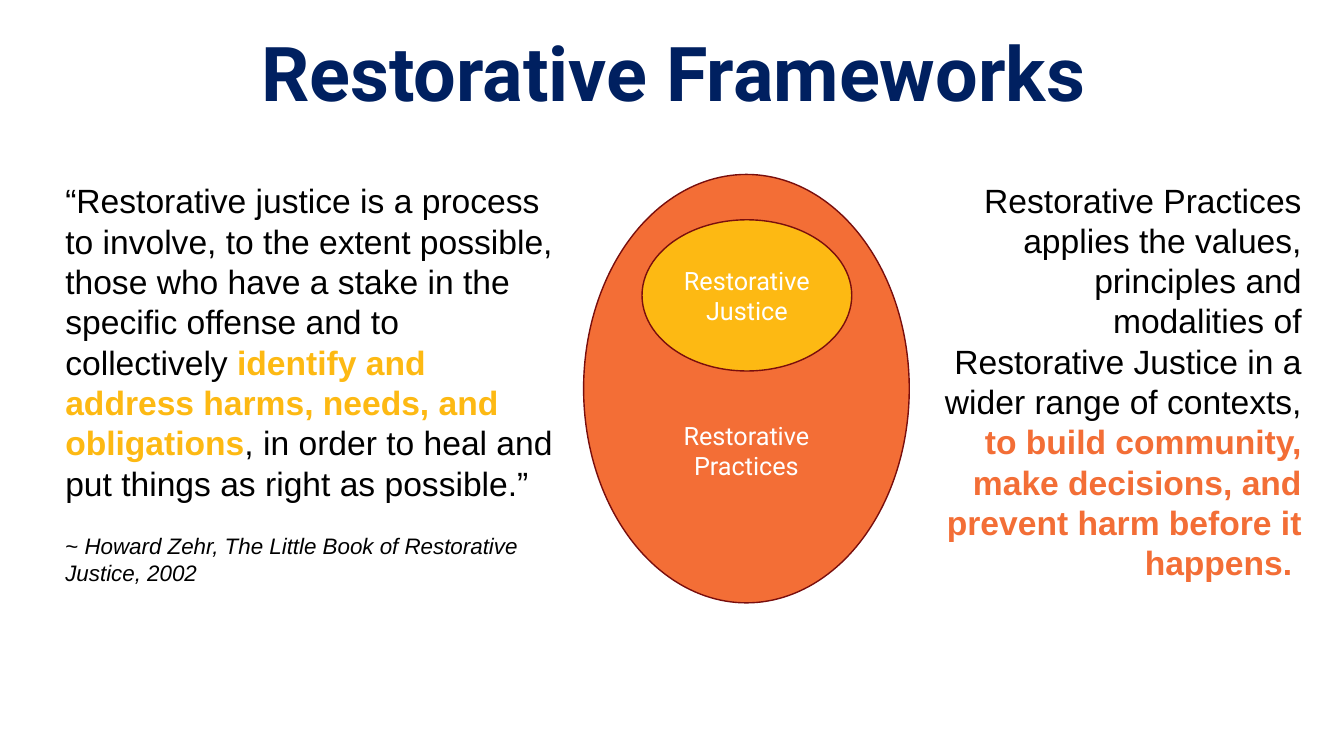
from dataclasses import dataclass

import pptx
import pptx.dml.color
import pptx.enum.shapes
import pptx.enum.text
import pptx.util

Pt = pptx.util.Pt
RGB = pptx.dml.color.RGBColor.from_string
ALIGN = pptx.enum.text.PP_ALIGN
MIDDLE = pptx.enum.text.MSO_ANCHOR.MIDDLE


@dataclass
class Theme:
    navy: str = "002060"
    black: str = "000000"
    white: str = "FFFFFF"
    gold: str = "FDB913"
    orange: str = "F36E36"
    maroon: str = "790E0D"
    heading: str = "Roboto"
    body: str = "Arial"
    title_size: int = 54
    body_size: int = 24
    label_size: int = 18
    source_size: int = 16


theme = Theme()


def add_run(p, text, font, size, color, bold=False, italic=False):
    r = p.add_run()
    r.text = text
    r.font.name = font
    r.font.size = Pt(size)
    r.font.color.rgb = RGB(color)
    r.font.bold = bold
    r.font.italic = italic


prs = pptx.Presentation()
prs.slide_width, prs.slide_height = Pt(960), Pt(540)
s = prs.slides.add_slide(prs.slide_layouts[5])

title = s.shapes.title
title.left, title.top, title.width, title.height = Pt(25.2), Pt(26.6), Pt(911.5), Pt(56.9)
tf = title.text_frame
tf.word_wrap = True
tf.auto_size = pptx.enum.text.MSO_AUTO_SIZE.NONE
tf.vertical_anchor = MIDDLE
p = tf.paragraphs[0]
p.alignment = ALIGN.CENTER
p.line_spacing = 0.9
add_run(p, "Restorative Frameworks", theme.heading, theme.title_size, theme.navy, bold=True)

quote = [
    ("“Restorative justice is a process to involve, to the extent possible, those who have a "
     "stake in the specific offense and to collectively ", theme.black, False),
    ("identify and address harms, needs, and obligations", theme.gold, True),
    (", in order to heal and put things as right as possible.”", theme.black, False),
]
practices = [
    ("Restorative Practices applies the values, principles and modalities of "
     "Restorative Justice in a wider range of contexts, ", theme.black, False),
    ("to build community, make decisions, and prevent harm before it happens. ",
     theme.orange, True),
]
columns = [
    (39.6, 125.3, 367.2, 307.4, ALIGN.LEFT, quote),
    (661, 124.6, 275.8, 298, ALIGN.RIGHT, practices),
]
frames = []
for left, top, width, height, align, runs in columns:
    tf = s.shapes.add_textbox(Pt(left), Pt(top), Pt(width), Pt(height)).text_frame
    tf.word_wrap = True
    p = tf.paragraphs[0]
    p.alignment = align
    for text, color, bold in runs:
        add_run(p, text, theme.body, theme.body_size, color, bold)
    frames.append(tf)

p = frames[0].add_paragraph()
p.space_before = Pt(20.7)
add_run(p, "~ ", theme.body, theme.source_size, theme.black)
add_run(p, "Howard Zehr, The Little Book of Restorative Justice, 2002",
        theme.body, theme.source_size, theme.black, italic=True)

ellipses = [
    ("Restorative Practices", 416.9, 124.6, 232.6, 306, theme.orange, 92),
    ("Restorative Justice", 458.6, 157, 149.8, 108, theme.gold, 3.6),
]
for label, left, top, width, height, fill, inset in ellipses:
    sp = s.shapes.add_shape(pptx.enum.shapes.MSO_SHAPE.OVAL,
                            Pt(left), Pt(top), Pt(width), Pt(height))
    sp.shadow.inherit = False
    sp.fill.solid()
    sp.fill.fore_color.rgb = RGB(fill)
    sp.line.color.rgb = RGB(theme.maroon)
    sp.line.width = Pt(1)
    tf = sp.text_frame
    tf.word_wrap = True
    tf.vertical_anchor = MIDDLE
    tf.margin_top = Pt(inset)
    p = tf.paragraphs[0]
    p.alignment = ALIGN.CENTER
    add_run(p, label, theme.heading, theme.label_size, theme.white)

prs.save("out.pptx")
